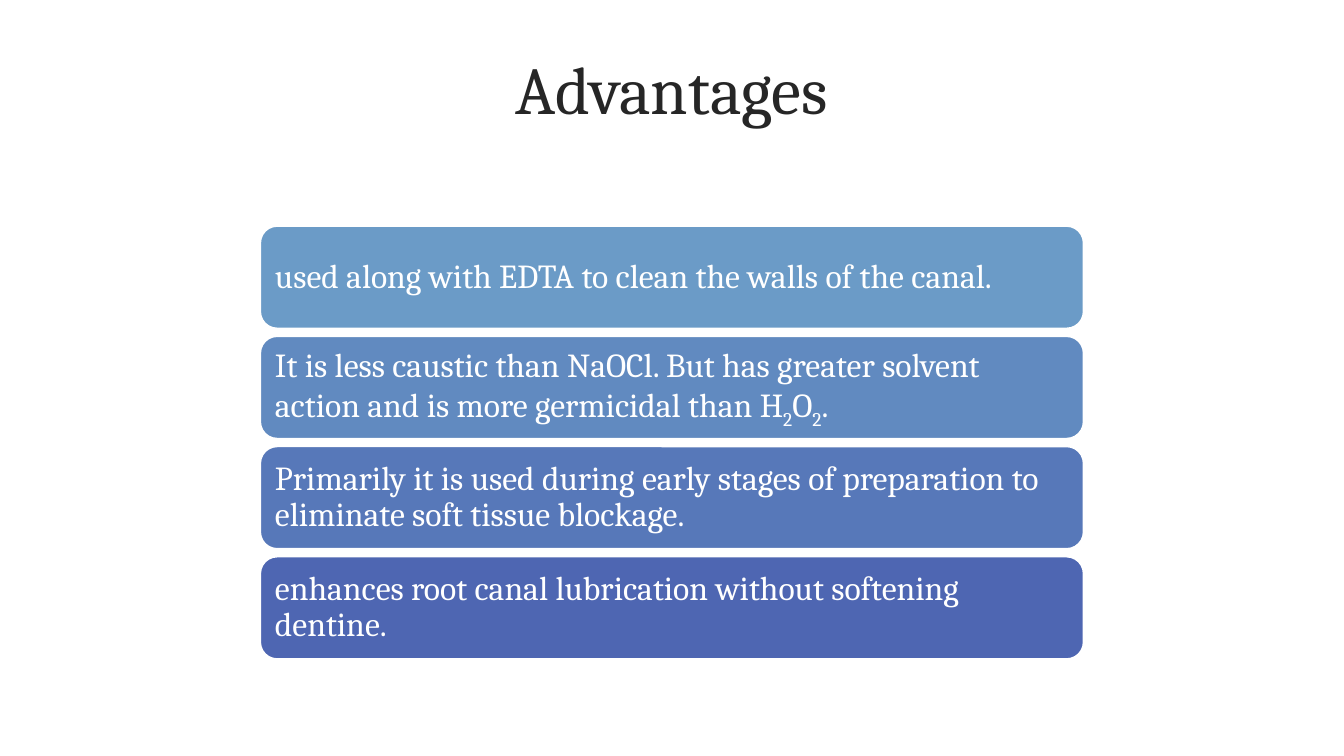
from dataclasses import dataclass

from pptx import Presentation
from pptx import util as u
from pptx.dml.color import RGBColor
from pptx.enum import shapes, text

WIDE, HIGH = u.Inches(13.33), u.Inches(7.5)
FONT = "Cambria"
COLORS = {
    "ink": "262626", "white": "FFFFFF",
    "sky": "6B9BC7", "steel": "618AC0", "blue": "5778B9", "deep": "4E66B2",
}


@dataclass
class Bar:
    words: str  # pieces between tildes are subscripts
    fill: str


BARS = [
    Bar("used along with EDTA to clean the walls of the canal.", "sky"),
    Bar("It is less caustic than NaOCl. But has greater solvent action "
        "and is more germicidal than H~2~O~2~.", "steel"),
    Bar("Primarily it is used during early stages of preparation to "
        "eliminate soft tissue blockage.", "blue"),
    Bar("enhances root canal lubrication without softening dentine.", "deep"),
]

# Percent of the slide's width or height
LEFT, WIDTH = 19.35, 61.29
TOP, END, TALL = 29.87, 87.2, 13.6
STEP = (END - TOP - TALL) / (len(BARS) - 1)


def across(share: float) -> int:
    return round(WIDE * share / 100)


def down(share: float) -> int:
    return round(HIGH * share / 100)


def color(name: str) -> RGBColor:
    return RGBColor.from_string(COLORS[name])


def write(shape, words: str, *, size: int, ink: str, align, space: float | None = None):
    frame = shape.text_frame
    frame.word_wrap = True
    frame.auto_size = text.MSO_AUTO_SIZE.NONE
    frame.vertical_anchor = text.MSO_ANCHOR.MIDDLE
    para = frame.paragraphs[0]
    para.alignment = align
    para.line_spacing = space
    for i, piece in enumerate(words.split("~")):
        run = para.add_run()
        run.text = piece
        font = run.font
        font.name, font.size = FONT, u.Pt(size)
        font.color.rgb = color(ink)
        if i % 2:
            run._r.get_or_add_rPr().set("baseline", "-25000")
    return para


def draw(slide, bar: Bar, row: int) -> None:
    shape = slide.shapes.add_shape(
        shapes.MSO_SHAPE.ROUNDED_RECTANGLE,
        across(LEFT), down(TOP + row * STEP), across(WIDTH), down(TALL))
    shape.shadow.inherit = False
    shape.fill.solid()
    shape.fill.fore_color.rgb = color(bar.fill)
    shape.line.color.rgb = color("white")
    shape.line.width = u.Pt(1.5)
    frame = shape.text_frame
    frame.margin_left = frame.margin_right = u.Inches(0.1)
    frame.margin_top = frame.margin_bottom = u.Inches(0.1)
    write(shape, bar.words, size=24, ink="white",
          align=text.PP_ALIGN.LEFT, space=0.9)


def main() -> None:
    deck = Presentation()
    deck.slide_width, deck.slide_height = WIDE, HIGH
    slide = deck.slides.add_slide(deck.slide_layouts[5])
    title = slide.shapes.title
    title.left, title.top = across(6), down(6.4)
    title.width, title.height = across(88), down(21.07)
    para = write(title, "Advantages", size=48, ink="ink",
                 align=text.PP_ALIGN.CENTER)
    para.add_line_break()
    para.font.size = u.Pt(48)
    for row, bar in enumerate(BARS):
        draw(slide, bar, row)
    deck.save("out.pptx")


if __name__ == "__main__":
    main()
